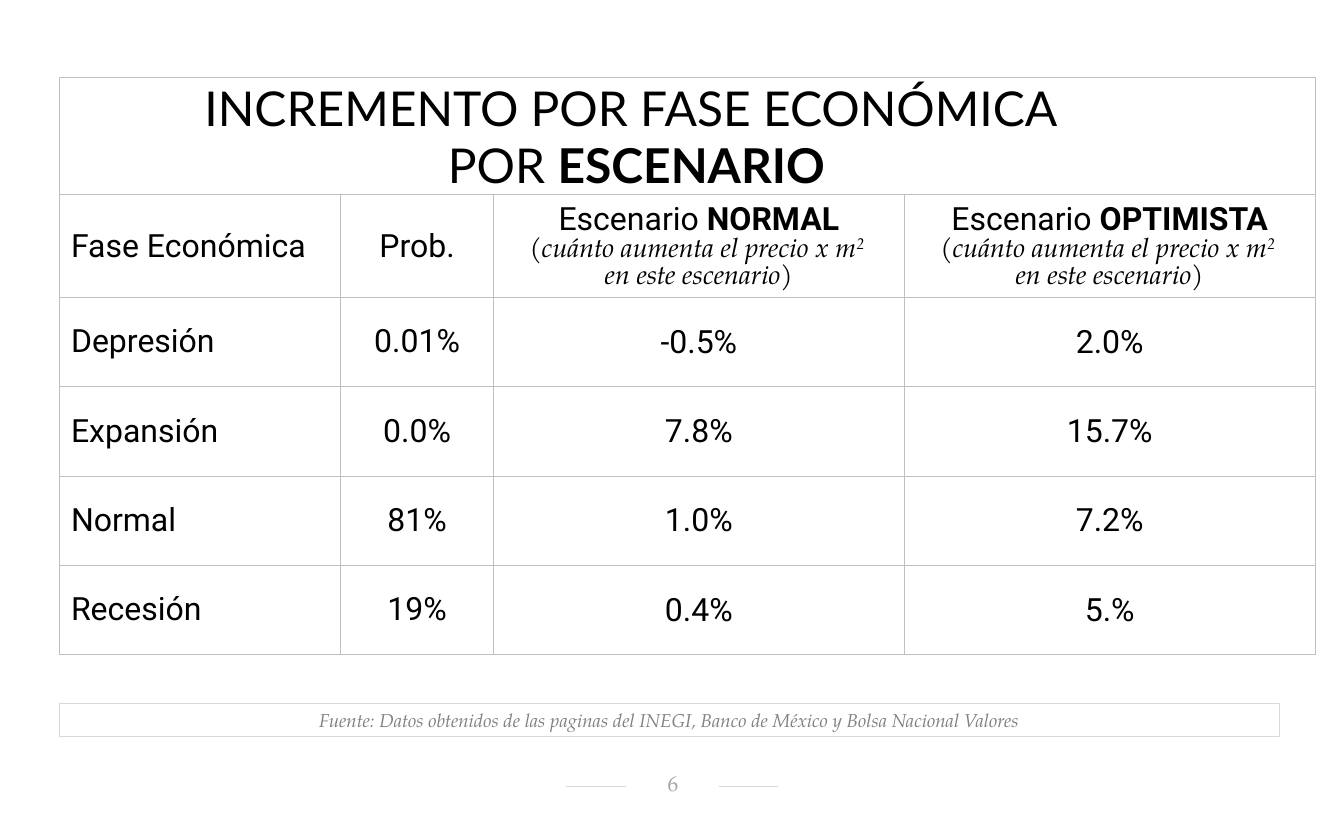
from lxml import etree
from pptx import Presentation
from pptx.dml.color import RGBColor
from pptx.enum import shapes, text
from pptx.oxml.ns import qn
from pptx.util import Inches, Pt

SERIF = "TeX Gyre Pagella"
TITLE = {"name": "Lato", "size": 36, "color": "000000"}
BODY = {"name": "Roboto", "size": 24, "color": "000000"}
DETAIL = {"name": SERIF, "size": 20, "color": "000000", "italic": True}
SOURCE = {"name": SERIF, "size": 14, "color": "808080", "italic": True}
PAGE = {"name": SERIF, "size": 16, "color": "A6A6A6"}
BOLD = {"bold": True}
CENTER, LEFT = text.PP_ALIGN.CENTER, text.PP_ALIGN.LEFT


def scenario(label):
    return [
        [("Escenario ", BODY), (label, BODY | BOLD)],
        [("(cuánto aumenta el precio x m", DETAIL), ("2 ", DETAIL | {"baseline": 30000})],
        [("en este escenario)", DETAIL)],
    ]


title = [
    [("INCREMENTO POR FASE ECONÓMICA ", TITLE)],
    [("POR ", TITLE), ("ESCENARIO", TITLE | BOLD)],
]
headings = [
    [[("Fase Económica", BODY)]],
    [[("Prob.", BODY)]],
    scenario("NORMAL"),
    scenario("OPTIMISTA"),
]
phases = [
    ("Depresión", "0.01%", "-0.5%", "2.0%"),
    ("Expansión", "0.0%", "7.8%", "15.7%"),
    ("Normal", "81%", "1.0%", "7.2%"),
    ("Recesión", "19%", "0.4%", "5.%"),
]
source_note = "Fuente: Datos obtenidos de las paginas del INEGI, Banco de México y Bolsa Nacional Valores"
page_number = "6"

column_widths = [2.93, 1.59, 4.28, 4.28]
row_heights = [1.2, 1.07] + [0.93] * len(phases)
heading_insets = (0.12, 0.01, 0.12, 0)
phase_insets = [(0.12, 0.03, 0.12, 0.03)] * 2 + [heading_insets, (0.01, 0.01, 0.01, 0)]


def color(value):
    return RGBColor.from_string(value)


def write(frame, paragraphs, align=CENTER):
    for index, runs in enumerate(paragraphs):
        paragraph = frame.paragraphs[0] if index == 0 else frame.add_paragraph()
        paragraph.alignment = align
        for words, style in runs:
            run = paragraph.add_run()
            run.text = words
            for key, value in style.items():
                if key == "color":
                    run.font.color.rgb = color(value)
                elif key == "baseline":
                    run.font._element.set("baseline", str(value))
                else:
                    setattr(run.font, key, Pt(value) if key == "size" else value)


def set_insets(holder, insets):
    for side, inset in zip(("left", "top", "right", "bottom"), insets):
        setattr(holder, f"margin_{side}", Inches(inset))


def set_borders(cell, line_color="BFBFBF", points=0.5):
    properties = cell._tc.get_or_add_tcPr()
    for position, side in enumerate(("lnL", "lnR", "lnT", "lnB")):
        border = etree.Element(qn(f"a:{side}"), w=str(Pt(points)))
        fill = etree.SubElement(border, qn("a:solidFill"))
        etree.SubElement(fill, qn("a:srgbClr"), val=line_color)
        properties.insert(position, border)


def fill_cell(cell, paragraphs, insets, align=CENTER):
    cell.vertical_anchor = text.MSO_ANCHOR.MIDDLE
    set_insets(cell, insets)
    write(cell.text_frame, paragraphs, align)


def add_scenario_table(slide):
    table = slide.shapes.add_table(
        len(row_heights), len(column_widths), Inches(0.62), Inches(0.81),
        Inches(sum(column_widths)), Inches(sum(row_heights))).table
    table.first_row = table.horz_banding = False
    for column, width in zip(table.columns, column_widths):
        column.width = Inches(width)
    for row, height in zip(table.rows, row_heights):
        row.height = Inches(height)
    for cell in table.iter_cells():
        cell.fill.background()
        set_borders(cell)

    table.cell(0, 0).merge(table.cell(0, len(column_widths) - 1))
    fill_cell(table.cell(0, 0), title, (0.12, 0.01, 1.18, 0))
    for col, heading in enumerate(headings):
        align = CENTER if col else LEFT
        fill_cell(table.cell(1, col), heading, heading_insets, align)
        for row, phase in enumerate(phases, start=2):
            fill_cell(table.cell(row, col), [[(phase[col], BODY)]], phase_insets[col], align)


def add_source_note(slide):
    box = slide.shapes.add_shape(
        shapes.MSO_SHAPE.RECTANGLE, Inches(0.62), Inches(7.33), Inches(12.71), Inches(0.34))
    box.shadow.inherit = False
    box.fill.background()
    box.line.color.rgb = color("D9D9D9")
    box.line.width = Pt(0.75)
    box.text_frame.word_wrap = True
    box.text_frame.vertical_anchor = text.MSO_ANCHOR.MIDDLE
    write(box.text_frame, [[(source_note, SOURCE)]])


def add_page_number(slide):
    for start, end in ((5.9, 6.52), (7.49, 8.1)):
        rule = slide.shapes.add_connector(
            shapes.MSO_CONNECTOR.STRAIGHT, Inches(start), Inches(8.19), Inches(end), Inches(8.19))
        rule.line.color.rgb = color("D9D9D9")
        rule.line.width = Pt(0.5)
        etree.SubElement(rule._element.spPr, qn("a:effectLst"))
    frame = slide.shapes.add_textbox(
        Inches(6.51), Inches(8.04), Inches(0.98), Inches(0.26)).text_frame
    frame.word_wrap = True
    frame.vertical_anchor = text.MSO_ANCHOR.MIDDLE
    set_insets(frame, (0.12, 0.02, 0.1, 0.05))
    write(frame, [[(page_number, PAGE)]])


def main():
    deck = Presentation()
    deck.slide_width, deck.slide_height = Inches(14), Inches(8.5)
    slide = deck.slides.add_slide(deck.slide_layouts[6])
    add_page_number(slide)
    add_source_note(slide)
    add_scenario_table(slide)
    deck.save("out.pptx")


if __name__ == "__main__":
    main()
